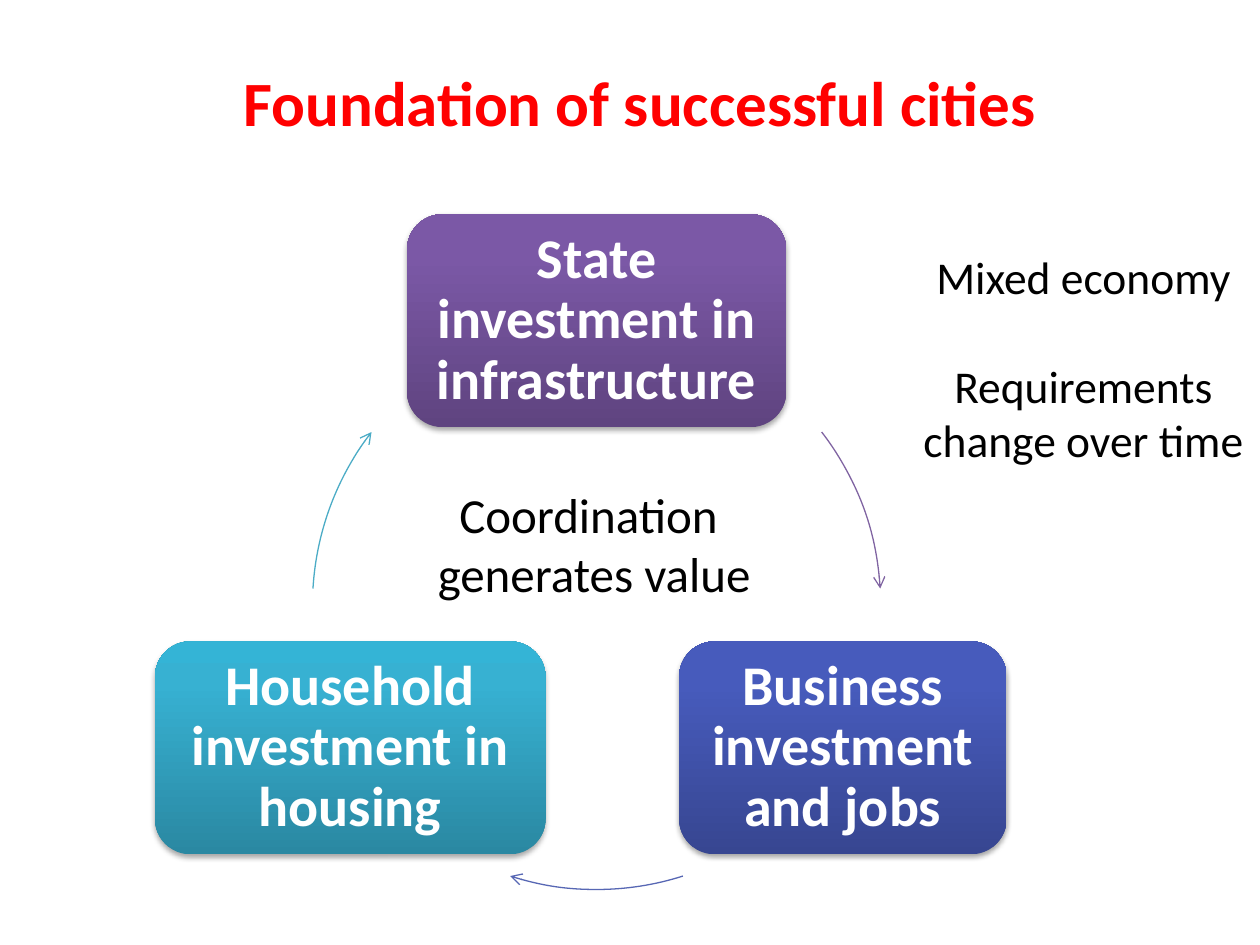
"""Build a slide with a three-part investment cycle."""
from copy import deepcopy

from pptx import Presentation
from pptx.dml.color import RGBColor
from pptx.enum.shapes import MSO_SHAPE as Preset
from pptx.enum.text import MSO_ANCHOR as Anchor, PP_ALIGN as Align
from pptx.oxml import parse_xml
from pptx.oxml.ns import nsdecls, qn
from pptx.util import Inches, Pt

COLORS = {
    "title": "FF0000",
    "text": "000000",
    "box_text": "FFFFFF",
    "state": ("5F4480", "7B58A6", "7C57A8"),
    "business": ("374691", "475BBC", "455ABF"),
    "household": ("2A88A2", "37B1D2", "34B4D6"),
    "state_arrow": "8064A2",
    "business_arrow": "5767B4",
    "household_arrow": "4BACC6",
}
GRADIENT_POSITIONS = (0, 0.8, 1)
BOX_HEIGHT = 1.69
CIRCLE = (2.48, 2.55, 4.51, 4.51)


def write_text(shape, *lines, size, color="text", bold=False, inset=None,
               line_spacing=None, gap=0):
    text_frame = shape.text_frame
    text_frame.word_wrap = True
    text_frame.vertical_anchor = Anchor.MIDDLE
    if inset is not None:
        text_frame.margin_left = text_frame.margin_right = Inches(inset)
        text_frame.margin_top = text_frame.margin_bottom = Inches(inset)
    for index, line in enumerate(lines):
        paragraph = text_frame.add_paragraph() if index else text_frame.paragraphs[0]
        paragraph.alignment = Align.CENTER
        paragraph.line_spacing = line_spacing
        if index and gap:
            paragraph.space_before = Pt(gap)
        run = paragraph.add_run()
        run.text = line
        run.font.name = "Calibri"
        run.font.size = Pt(size)
        run.font.bold = bold
        run.font.color.rgb = RGBColor.from_string(COLORS[color])


def set_gradient(shape, colors):
    shape.fill.gradient()
    shape.fill.gradient_angle = 90
    stop_list = shape._element.spPr.find(".//" + qn("a:gsLst"))
    stop_list.append(deepcopy(stop_list[0]))
    for stop, position, color in zip(shape.fill.gradient_stops, GRADIENT_POSITIONS, colors):
        stop.position = position
        stop.color.rgb = RGBColor.from_string(color)


def add_shadow(shape):
    shape.shadow.inherit = False
    shape._element.spPr.find(qn("a:effectLst")).append(parse_xml(
        f'<a:outerShdw {nsdecls("a")} blurRad="{Pt(3.1)}" dist="{Pt(1.8)}" '
        'dir="5400000" rotWithShape="0"><a:srgbClr val="000000">'
        '<a:alpha val="35000"/></a:srgbClr></a:outerShdw>'))


def add_box(slide, name, text, left, top, width):
    box = slide.shapes.add_shape(
        Preset.ROUNDED_RECTANGLE, *map(Inches, (left, top, width, BOX_HEIGHT)))
    set_gradient(box, COLORS[name])
    box.line.fill.background()
    add_shadow(box)
    write_text(box, text, size=32, color="box_text", bold=True, inset=0.13,
               line_spacing=0.9)


def add_arc_arrow(slide, color, start, end):
    arc = slide.shapes.add_shape(Preset.ARC, *map(Inches, CIRCLE))
    for index, degrees in enumerate((start, end)):
        arc.adjustments[index] = degrees * 0.6
    arc.fill.background()
    arc.line.color.rgb = RGBColor.from_string(COLORS[color])
    arc.line.width = Pt(0.75)
    arc.shadow.inherit = False
    arc._element.spPr.find(qn("a:ln")).append(
        parse_xml(f'<a:tailEnd {nsdecls("a")} type="arrow"/>'))


def add_note(slide, position, *lines, **text_format):
    note = slide.shapes.add_textbox(*map(Inches, position))
    write_text(note, *lines, **text_format)


def add_title(slide, text):
    title = slide.shapes.title
    title.left, title.top, title.width, title.height = map(Inches, (0.75, 0.18, 8.66, 1.25))
    write_text(title, text, size=36, color="title", bold=True)


def main():
    presentation = Presentation()
    presentation.slide_width, presentation.slide_height = Inches(10), Inches(7.5)
    slide = presentation.slides.add_slide(presentation.slide_layouts[5])

    add_title(slide, "Foundation of successful cities")
    add_box(slide, "state", "State investment in infrastructure", 3.23, 1.7, 3.01)
    add_box(slide, "business", "Business investment and jobs", 5.39, 5.09, 2.6)
    add_box(slide, "household", "Household investment in housing", 1.23, 5.09, 3.1)
    add_arc_arrow(slide, "state_arrow", 322.4, 356.6)
    add_arc_arrow(slide, "business_arrow", 72.3, 107.7)
    add_arc_arrow(slide, "household_arrow", 183.4, 217.6)
    add_note(slide, (2.85, 3.75, 3.73, 1.12), "Coordination ", "generates value", size=28)
    add_note(slide, (7.2, 1.7, 2.8, 2.28), "Mixed economy",
             "Requirements change over time", size=26, gap=31)

    presentation.save("out.pptx")


if __name__ == "__main__":
    main()
